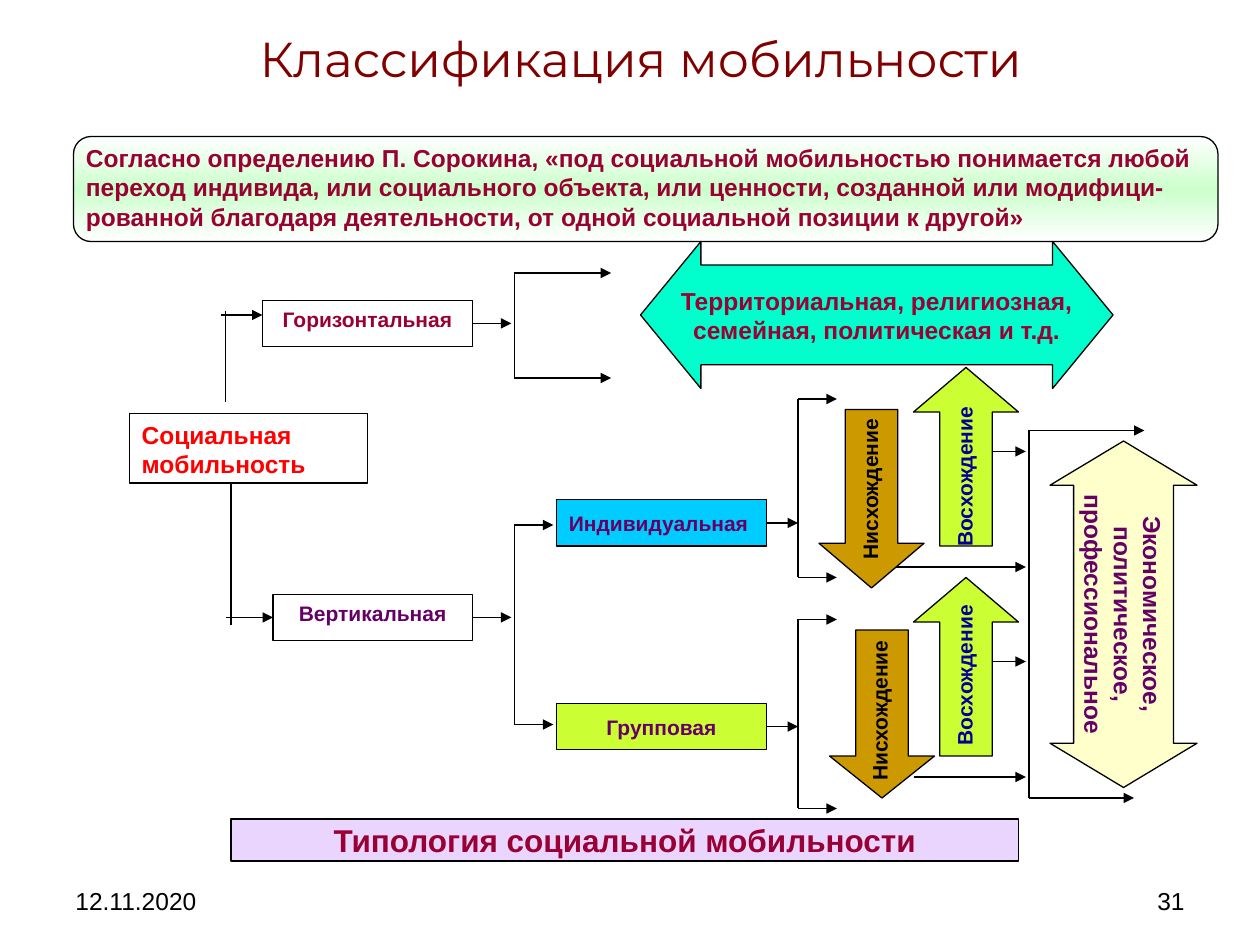
from lxml.etree import SubElement
from copy import deepcopy
from pptx import Presentation
from pptx.dml.color import RGBColor
from pptx.enum.shapes import MSO_CONNECTOR, MSO_SHAPE
from pptx.enum.text import MSO_ANCHOR, PP_ALIGN
from pptx.oxml.ns import qn
from pptx.util import Inches, Pt

color = RGBColor.from_string
deck = Presentation()
deck.slide_width, deck.slide_height = Inches(10), Inches(7.5)
slide = deck.slides.add_slide(deck.slide_layouts[5])
shapes = slide.shapes
column, row = deck.slide_width / 120, deck.slide_height / 90


def add_box(kind, place, fill=None, lines=(), size=14, ink="000000", bold=True,
            align=PP_ALIGN.CENTER, anchor=MSO_ANCHOR.MIDDLE, wrap=True, adjust=(), turn=0):
    """Add a preset shape, or a text box if kind is None; place is in grid units."""
    left, top, width, height = place
    frame = int(left * column), int(top * row), int(width * column), int(height * row)
    if kind is None:
        box = shapes.add_textbox(*frame)
    else:
        box = shapes.add_shape(kind, *frame)
        box.shadow.inherit = False
        box.line.color.rgb = color("000000")
        box.line.width = Pt(0.75)
        for index, value in enumerate(adjust):
            box.adjustments[index] = value
    if fill:
        box.fill.solid()
        box.fill.fore_color.rgb = color(fill)
    box.rotation = turn
    text = box.text_frame
    text.word_wrap = wrap
    text.vertical_anchor = anchor
    for index, line in enumerate(lines):
        para = text.add_paragraph() if index else text.paragraphs[0]
        para.alignment = align
        span = para.add_run()
        span.text = line
        span.font.name, span.font.size, span.font.bold = "Arial", Pt(size), bold
        span.font.color.rgb = color(ink)
    return box


def add_line(start, end, arrow=True):
    line = shapes.add_connector(MSO_CONNECTOR.STRAIGHT, int(start[0] * column), int(start[1] * row),
                                int(end[0] * column), int(end[1] * row))
    line.line.color.rgb = color("000000")
    line.line.width = Pt(0.75)
    if arrow:
        SubElement(line.line._get_or_add_ln(), qn("a:tailEnd"), type="triangle")
    SubElement(line._element.spPr, qn("a:effectLst"))
    return line


# Title, date and page number
title = shapes.title
title.left, title.top = int(7 * column), int(3 * row)
title.width, title.height = int(108 * column), int(5 * row)
title.text_frame.vertical_anchor = MSO_ANCHOR.MIDDLE
para = title.text_frame.paragraphs[0]
para.alignment = PP_ALIGN.CENTER
span = para.add_run()
span.text = "Классификация мобильности"
span.font.name, span.font.size = "Montserrat", Pt(28)
span.font.color.rgb = color("800000")
add_box(None, (6, 83.4, 28, 4.8), lines=["12.11.2020"], bold=False, align=PP_ALIGN.LEFT)
add_box(None, (86, 83.4, 28, 4.8), lines=["31"], bold=False, align=PP_ALIGN.RIGHT)

# Definition on a gradient panel
panel = add_box(MSO_SHAPE.ROUNDED_RECTANGLE, (7, 13, 109, 10), adjust=[0.167])
panel.fill.gradient()
panel.fill.gradient_angle = 90
stop_list = panel._element.spPr.find(qn("a:gradFill")).find(qn("a:gsLst"))
stop_list.insert(1, deepcopy(stop_list[0]))
for stop, position, shade in zip(panel.fill.gradient_stops, (0, 0.5, 1), ("FFFFFF", "CCFFCC", "FFFFFF")):
    stop.position = position
    stop.color.rgb = color(shade)
add_box(None, (7, 13, 108, 9.6), ink="990033", align=PP_ALIGN.LEFT, anchor=MSO_ANCHOR.TOP, lines=[
    "Согласно определению П. Сорокина, «под социальной мобильностью понимается любой "
    "переход индивида, или социального объекта, или ценности, созданной или модифици-"
    "рованной благодаря деятельности, от одной социальной позиции к другой»"])

# Boxes of the tree, each with an arrow from its right side
add_box(MSO_SHAPE.RECTANGLE, (12.3, 39.4, 22.7, 6.6), "FFFFFF", ["Социальная", "мобильность"],
        ink="FF0000", align=PP_ALIGN.LEFT, anchor=MSO_ANCHOR.TOP)
tree_boxes = [
    ("Горизонтальная", 25, 28.6, 20, "FFFFFF", "990033", MSO_ANCHOR.TOP, PP_ALIGN.CENTER, 48.7),
    ("Вертикальная", 26, 56.6, 19, "FFFFFF", "660066", MSO_ANCHOR.TOP, PP_ALIGN.CENTER, 48.7),
    ("Групповая", 53, 67, 20, "CCFF33", "660066", MSO_ANCHOR.MIDDLE, PP_ALIGN.CENTER, 76),
    ("Индивидуальная", 53, 47.6, 20, "00CCFF", "660066", MSO_ANCHOR.MIDDLE, PP_ALIGN.JUSTIFY, 76),
]
box_height = 4.4
boxes = {}
for name, left, top, width, fill, ink, anchor, align, tip in tree_boxes:
    boxes[name] = add_box(MSO_SHAPE.RECTANGLE, (left, top, width, box_height), fill, [name], 12, ink,
                          anchor=anchor, align=align)
    middle = top + box_height / 2
    add_line((left + width, middle), (tip, middle)).begin_connect(boxes[name], 3)

# Trunk from the root to the two branches
add_line((21.5, 29.6), (21.5, 38.3), arrow=False)
add_line((22, 46), (22, 59.5), arrow=False)
add_line((21, 30), (25, 30))
add_line((21.5, 58.8), (26, 58.8)).end_connect(boxes["Вертикальная"], 1)

# Brackets: a stem with an arrow at each end
for stem, top, bottom, top_tip, bottom_tip in [
    (49, 26, 36, 58.2, 58.2),
    (49, 50, 69, 52.7, 52.7),
    (76, 38, 55, 79.7, 79.7),
    (76, 59, 77, 79.7, 79.7),
    (98, 41, 76, 109, 108),
]:
    add_line((stem, top), (stem, bottom), arrow=False)
    add_line((stem, top), (top_tip, top))
    add_line((stem, bottom), (bottom_tip, bottom))

for start, height in [(94, 43), (85, 54), (94, 63), (87, 74)]:
    add_line((start, height), (97.7, height))

# Block arrows
add_box(MSO_SHAPE.LEFT_RIGHT_ARROW, (61, 23, 45, 14), "00FFCC",
        ["Территориальная, религиозная,", "семейная, политическая и т.д."],
        ink="990033", wrap=False, adjust=[0.679, 0.411])
add_box(MSO_SHAPE.LEFT_RIGHT_ARROW, (90.5, 51.5, 33, 14), "FFFFCC",
        ["Экономическое,", "политическое,", "профессиональное"],
        ink="660066", wrap=False, adjust=[0.679, 0.301], turn=90)
for kind, left, top, height, head, fill in [
    (MSO_SHAPE.UP_ARROW, 87, 35, 17, 0.425, "CCFF33"),
    (MSO_SHAPE.UP_ARROW, 87, 55, 17, 0.425, "CCFF33"),
    (MSO_SHAPE.DOWN_ARROW, 78, 39, 17, 0.425, "CC9900"),
    (MSO_SHAPE.DOWN_ARROW, 79, 60, 16, 0.4, "CC9900"),
]:
    add_box(kind, (left, top, 10, height), fill, adjust=[0.5, head])
for label, left, top, ink in [
    ("Восхождение", 83.6, 43.2, "000099"),
    ("Восхождение", 83.6, 62.1, "000099"),
    ("Нисхождение", 74.6, 44.4, "000000"),
    ("Нисхождение", 75.5, 65.5, "000000"),
]:
    add_box(None, (left, top, 16.5, 3.6), lines=[label], size=12, ink=ink,
            align=PP_ALIGN.LEFT, anchor=MSO_ANCHOR.TOP, turn=270)

# Caption
caption = add_box(MSO_SHAPE.RECTANGLE, (22, 78, 75, 4), "CC99FF", ["Типология социальной мобильности"],
                  18, "990033", wrap=False)
caption_color = caption._element.spPr.find(qn("a:solidFill")).find(qn("a:srgbClr"))
SubElement(caption_color, qn("a:alpha"), val="41000")

deck.save("out.pptx")
